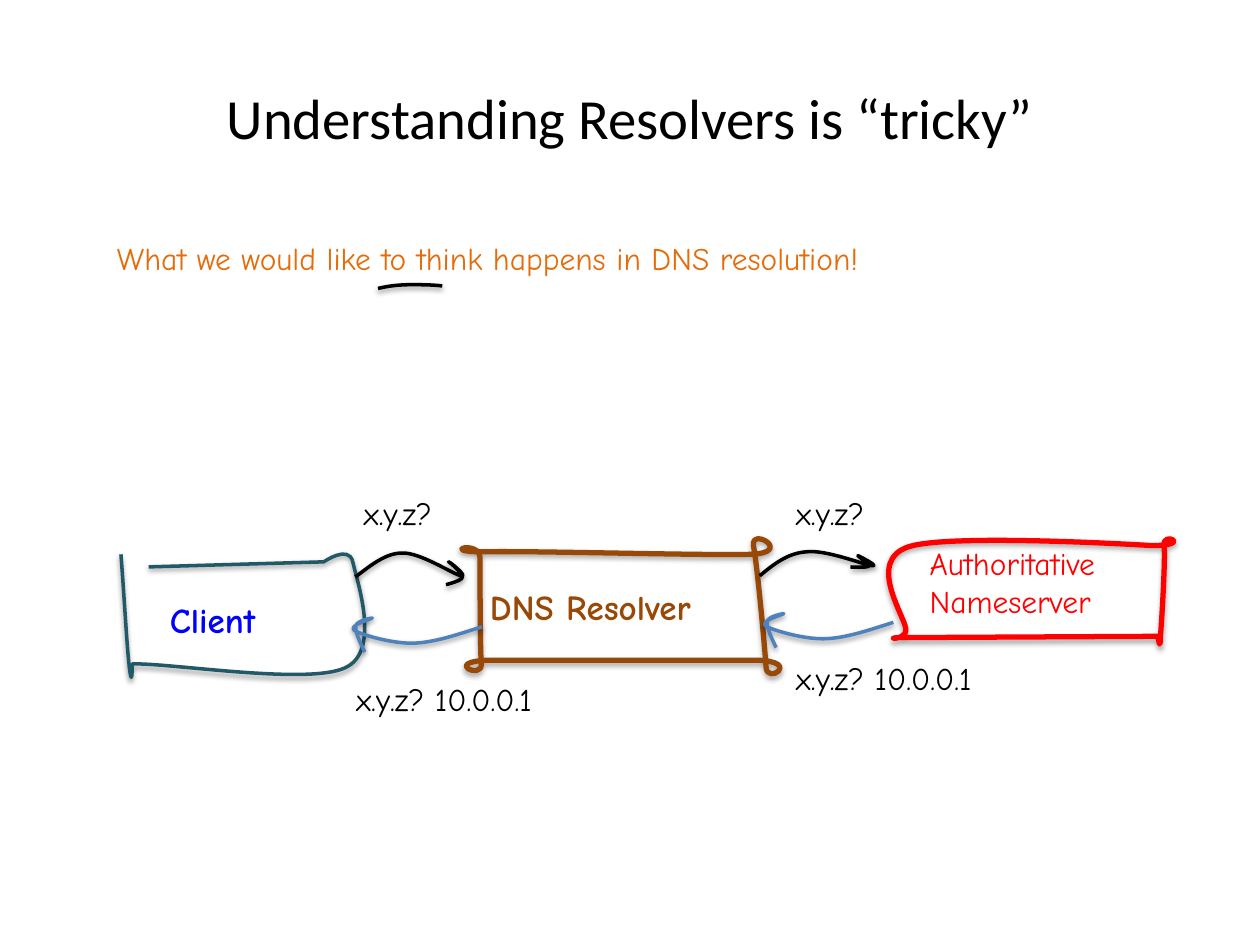
from lxml import etree
from pptx import Presentation, util as u
from pptx.dml.color import RGBColor
from pptx.enum import text
from pptx.oxml.ns import qn

# The slide is a grid of 1000 columns by 750 rows.
COLS, ROWS = 1000, 750
CELL = u.Inches(10) // COLS
BLACK, BLUE, TEAL = "000000", "4F81BD", "215968"
BROWN, RED = "984807", "FF0000"
HAND = "Comic Neue"

TITLE = "Understanding Resolvers is “tricky”"

# Each stroke is a start point, then curves (two controls and an end)
# or straight lines (an end only).
UNDERLINE = [(300, 229), (308, 227, 317, 226, 326, 226),
             (334, 226, 343, 226, 351, 227)]
CLIENT = [(96, 440), (99, 479, 101, 518, 103, 532),
          (105, 547, 105, 527, 105, 527), (134, 526, 245, 544, 274, 530),
          (303, 517, 283, 460, 280, 446), (277, 432, 257, 446, 257, 446),
          (118, 450)]
RESOLVER = [(382, 527), (383, 540, 351, 525, 388, 524),
            (424, 524, 564, 524, 601, 524), (637, 525, 608, 544, 608, 529),
            (607, 514, 601, 448, 598, 433), (596, 418, 631, 439, 595, 440),
            (559, 441, 419, 437, 383, 438), (347, 438, 381, 428, 381, 443),
            (381, 458, 381, 513, 382, 527)]
SERVER = [(721, 434), (754, 423, 914, 433, 914, 433),
          (948, 433, 922, 421, 924, 433), (925, 445, 922, 494, 921, 506),
          (921, 518, 919, 505, 919, 505), (726, 506),
          (692, 505, 720, 511, 719, 499), (717, 487, 688, 445, 721, 434)]
ASK_DNS = [(282, 458), (294, 449, 306, 439, 319, 439),
           (333, 438, 360, 456, 366, 457), (372, 458, 356, 445, 356, 446),
           (357, 446, 367, 455, 367, 458), (367, 461, 354, 464, 354, 464)]
ASK_AUTH = [(603, 457), (614, 448, 625, 439, 640, 438),
            (655, 436, 685, 448, 692, 449), (699, 450, 681, 441, 681, 441),
            (680, 441, 691, 448, 690, 449), (689, 451, 675, 450, 675, 450)]
REPLY = [(709, 494), (690, 500, 670, 507, 653, 507),
         (636, 507, 613, 500, 608, 497), (602, 493, 621, 488, 622, 487),
         (622, 487, 610, 489, 609, 493), (608, 497, 612, 506, 616, 514)]

# From back to front: words with their (left, top, width, height), or a
# stroke with the (columns, rows) it is moved by; then the format.
PARTS = [
    ("What we would like to think happens in DNS resolution!",
     (83, 185, 762, 40), dict(color="E46C0A")),
    (UNDERLINE, (0, 0), dict(color=BLACK)),
    ("Client", (125, 470, 111, 44), dict(size=20, color="0000FF", bold=True)),
    (CLIENT, (0, 0), dict(color=TEAL)),
    ("DNS Resolver", (379, 460, 229, 44),
     dict(size=20, color=BROWN, bold=True)),
    (RESOLVER, (0, 0), dict(color=BROWN, width=3, close=True)),
    ("x.y.z?", (279, 387, 87, 40), {}),
    (ASK_DNS, (0, 0), dict(color=BLACK)),
    ("Authoritative\nNameserver", (728, 427, 187, 71), dict(color=RED)),
    ("x.y.z?", (622, 387, 87, 40), {}),
    (SERVER, (0, 0), dict(color=RED, width=3, close=True)),
    (ASK_AUTH, (0, 0), dict(color=BLACK)),
    (REPLY, (0, 0), dict(color=BLUE)),
    (REPLY, (-326.5, 3.5), dict(color=BLUE)),
    ("x.y.z? 10.0.0.1", (622, 518, 187, 40), {}),
    ("x.y.z? 10.0.0.1", (273, 535, 187, 40), {}),
]


def rgb(code):
    return RGBColor.from_string(code)


def place(shape, box):
    shape.left, shape.top, shape.width, shape.height = (n * CELL for n in box)


def write(shape, words, size=18, color=BLACK, bold=False, font=HAND,
          align=text.PP_ALIGN.LEFT):
    frame = shape.text_frame
    frame.text = words
    for para in frame.paragraphs:
        para.alignment = align
        for run in para.runs:
            face = run.font
            face.name, face.size, face.bold = font, u.Pt(size), bold
            face.color.rgb = rgb(color)


def pairs(part):
    return list(zip(part[::2], part[1::2]))


def bounds(path, steps=50):
    """Return the top left and bottom right corners of a stroke."""
    seen = [path[0]]
    for last, part in zip(path, path[1:]):
        ctrl = [last[-2:], *pairs(part)]
        if len(ctrl) == 2:
            seen.append(part)
            continue
        for i in range(1, steps + 1):
            t = i / steps
            mix = ((1 - t) ** 3, 3 * t * (1 - t) ** 2,
                   3 * t * t * (1 - t), t ** 3)
            seen.append(tuple(sum(m * c[k] for m, c in zip(mix, ctrl))
                              for k in (0, 1)))
    xs, ys = zip(*seen)
    return (min(xs), min(ys)), (max(xs), max(ys))


def shade(shape, blur, dist, alpha):
    """Give the shape a soft black shadow that falls straight down."""
    shape.shadow.inherit = False
    effects = shape._element.spPr.find(qn("a:effectLst"))
    outer = etree.SubElement(effects, qn("a:outerShdw"), blurRad=str(u.Pt(blur)),
                             dist=str(u.Pt(dist)), dir="5400000",
                             rotWithShape="0")
    tint = etree.SubElement(outer, qn("a:srgbClr"), val=BLACK)
    etree.SubElement(tint, qn("a:alpha"), val=str(alpha * 1000))


def bend(shape, path, corner, close):
    """Set the shape's outline to the curves and lines of a stroke."""
    outline = next(shape._element.iter(qn("a:path")))
    for old in list(outline):
        outline.remove(old)
    for i, part in enumerate(path):
        tag = "moveTo" if i == 0 else "lnTo" if len(part) == 2 else "cubicBezTo"
        step = etree.SubElement(outline, qn("a:" + tag))
        for spot in pairs(part):
            x, y = (str(round((n - c) * CELL)) for n, c in zip(spot, corner))
            etree.SubElement(step, qn("a:pt"), x=x, y=y)
    if close:
        etree.SubElement(outline, qn("a:close"))


def draw(slide, path, shift, color, width=2, close=False):
    low, high = bounds(path)
    pen = slide.shapes.build_freeform(*(n * CELL for n in low))
    pen.add_line_segments([[n * CELL for n in high]], close=False)
    shape = pen.convert_to_shape(*(round(n * CELL) for n in shift))
    bend(shape, path, low, close)
    shape.fill.background()
    shape.line.color.rgb = rgb(color)
    shape.line.width = u.Pt(width)
    heavy = width > 2
    shade(shape, 3.1, 1.8 if heavy else 1.6, 35 if heavy else 38)


def label(slide, words, box, **style):
    shape = slide.shapes.add_textbox(0, 0, 0, 0)
    write(shape, words, **style)
    shape.text_frame.word_wrap = False
    shape.text_frame.auto_size = text.MSO_AUTO_SIZE.SHAPE_TO_FIT_TEXT
    place(shape, box)


def main():
    deck = Presentation()
    deck.slide_width, deck.slide_height = COLS * CELL, ROWS * CELL
    slide = deck.slides.add_slide(deck.slide_layouts[5])
    title = slide.shapes.title
    place(title, (50, 30, 900, 125))
    write(title, TITLE, size=32.4, font="Calibri", align=text.PP_ALIGN.CENTER)
    title.text_frame.vertical_anchor = text.MSO_ANCHOR.MIDDLE
    for part, spot, style in PARTS:
        add = label if isinstance(part, str) else draw
        add(slide, part, spot, **style)
    deck.save("out.pptx")


if __name__ == "__main__":
    main()
